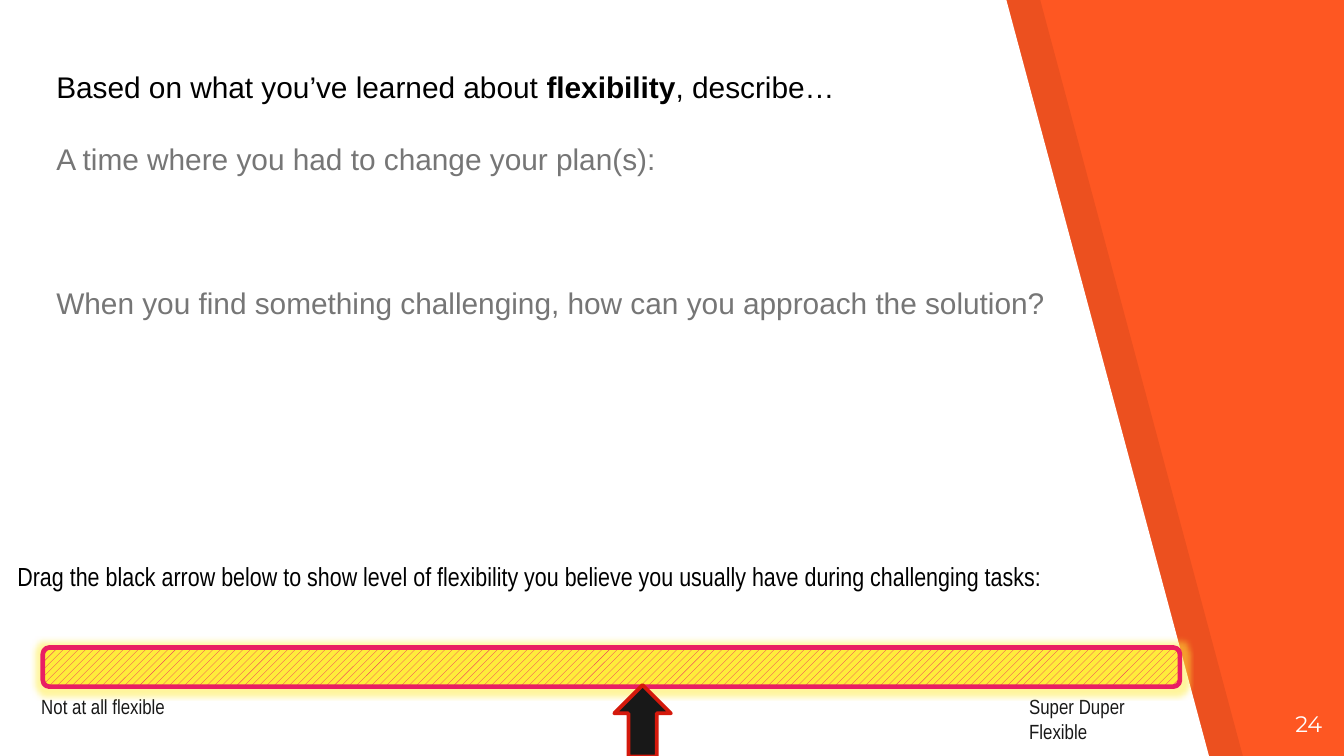
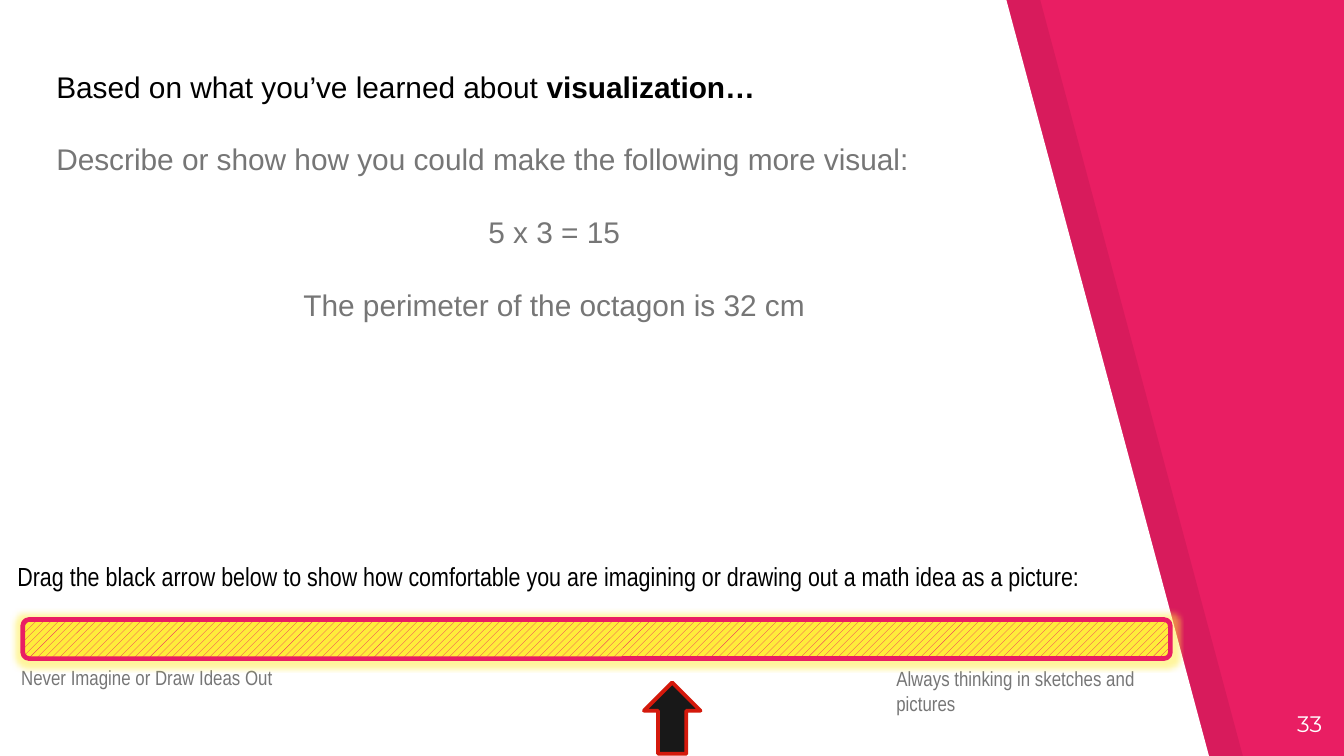
from lxml import etree
from pptx import Presentation
from pptx.dml.color import RGBColor
from pptx.enum.dml import MSO_PATTERN
from pptx.enum.shapes import MSO_SHAPE
from pptx.enum.text import MSO_ANCHOR, MSO_AUTO_SIZE, PP_ALIGN
from pptx.oxml.ns import qn
from pptx.util import Cm, Pt

LEFT, CENTER, RIGHT = PP_ALIGN.LEFT, PP_ALIGN.CENTER, PP_ALIGN.RIGHT
TOP, NO_FIT = MSO_ANCHOR.TOP, MSO_AUTO_SIZE.NONE
ROUND, ARROW = MSO_SHAPE.ROUNDED_RECTANGLE, MSO_SHAPE.UP_ARROW
STRIPES = MSO_PATTERN.WIDE_UPWARD_DIAGONAL

BLACK, WHITE, INK, GRAY = "000000", "FFFFFF", "181818", "767676"
ORANGE, PINK, YELLOW, RED = "FE5722", "E91E63", "FFEC3B", "D4190C"
SANS, NARROW, ROUNDED = "Arial", "Arial Narrow", "Montserrat"

SLIDES = [
    {
        "back": ORANGE,
        "number": "24",
        "title": ["Based on what you’ve learned about ", "flexibility", ", describe…"],
        "body": [
            ("A time where you had to change your plan(s):", LEFT, 0),
            ("When you find something challenging, how can you approach the solution?", LEFT, 58),
        ],
        "prompt": "Drag the black arrow below to show level of flexibility "
                  "you believe you usually have during challenging tasks:",
        "bar": (0.81, 12.24, 21.49, 0.74),
        "arrow": (11.61, 12.95, 1.07, 1.35),
        "ends": [
            ("Not at all flexible", (0.53, 13, 3.99, 0.74)),
            ("Super Duper Flexible", (19.2, 13, 3.43, 0.74)),
        ],
        "ink": INK,
    },
    {
        "back": PINK,
        "number": "33",
        "title": ["Based on what you’ve learned about ", "visualization…"],
        "body": [
            ("Describe or show how you could make the following more visual:", LEFT, 0),
            ("5 x 3 = 15", CENTER, 20),
            ("The perimeter of the octagon is 32 cm", CENTER, 20),
        ],
        "prompt": "Drag the black arrow below to show how comfortable you are "
                  "imagining or drawing out a math idea as a picture:",
        "bar": (0.43, 11.71, 21.69, 0.74),
        "arrow": (12.17, 12.9, 1.07, 1.35),
        "ends": [
            ("Never Imagine or Draw Ideas Out", (0.15, 12.45, 5.89, 0.74)),
            ("Always thinking in sketches and pictures", (16.69, 12.47, 5.89, 0.74)),
        ],
        "ink": GRAY,
    },
]


def paint(color, code):
    """Set a colour from a hex string."""
    color.rgb = RGBColor.from_string(code)


def style(run, size, font, code, bold=False):
    """Format one run."""
    run.font.size, run.font.name, run.font.bold = Pt(size), font, bold
    paint(run.font.color, code)


def place(shape, box):
    """Move a placeholder to a box and set up its frame."""
    shape.left, shape.top, shape.width, shape.height = map(Cm, box)
    frame = shape.text_frame
    frame.word_wrap, frame.auto_size = True, NO_FIT
    frame.vertical_anchor = TOP
    return frame


def label(slide, text, box, size, font, code, align=LEFT):
    """Add a wrapped text box with one paragraph."""
    frame = slide.shapes.add_textbox(*map(Cm, box)).text_frame
    frame.word_wrap = True
    line = frame.paragraphs[0]
    line.text, line.alignment = text, align
    style(line.runs[0], size, font, code)
    return frame


def panel(slide, layout, shift, code, alpha):
    """Draw a slanted panel and hand it to the layout."""
    pen = slide.shapes.build_freeform(Cm(shift), Cm(-0.03))
    points = [(0, 14.33), (22.86, 14.33), (19.02, 0)]
    pen.add_line_segments([(Cm(x + shift), Cm(y)) for x, y in points])
    shape = pen.convert_to_shape()
    shape.shadow.inherit = False
    shape.line.fill.background()
    shape.fill.solid()
    paint(shape.fill.fore_color, code)
    tint = shape.element.spPr.find(qn("a:solidFill"))[0]
    etree.SubElement(tint, qn("a:alpha"), val=str(alpha * 1000))
    layout.shapes.element.insert(2, shape.element)


def heading(slide, parts):
    """Fill the title, with its second part in bold."""
    line = place(slide.shapes.title, (0.81, 1.17, 19.33, 0.92)).paragraphs[0]
    line.alignment = LEFT
    for i, part in enumerate(parts):
        run = line.add_run()
        run.text = part
        style(run, 16, SANS, BLACK, i == 1)


def tasks(slide, items):
    """Fill the body with unbulleted task lines."""
    frame = place(slide.placeholders[1], (0.81, 2.53, 19.33, 3.7))
    frame.text = "\n".join(text for text, _, _ in items)
    for line, (_, align, gap) in zip(frame.paragraphs, items):
        line.alignment, line.space_before = align, Pt(gap)
        props = line._p.get_or_add_pPr()
        props.set("marL", "0")
        props.set("indent", "0")
        etree.SubElement(props, qn("a:buNone"))
        style(line.runs[0], 16, SANS, GRAY)


def block(slide, kind, box, edge, width):
    """Add an outlined preset shape without a shadow."""
    shape = slide.shapes.add_shape(kind, *map(Cm, box))
    shape.shadow.inherit = False
    paint(shape.line.color, edge)
    shape.line.width = Pt(width)
    return shape


def scale(slide, data):
    """Draw the prompt, striped bar, arrow and end labels."""
    label(slide, data["prompt"], (0.08, 10.46, 25.32, 0.86), 14, NARROW, BLACK)
    for text, box in data["ends"]:
        label(slide, text, box, 11, NARROW, data["ink"])
    bar = block(slide, ROUND, data["bar"], PINK, 2.5)
    bar.fill.patterned()
    bar.fill.pattern = STRIPES
    paint(bar.fill.fore_color, PINK)
    paint(bar.fill.back_color, YELLOW)
    effects = bar.element.spPr.find(qn("a:effectLst"))
    glow = etree.SubElement(effects, qn("a:glow"), rad=str(Pt(6)))
    tint = etree.SubElement(glow, qn("a:srgbClr"), val=YELLOW)
    etree.SubElement(tint, qn("a:alpha"), val="50000")
    arrow = block(slide, ARROW, data["arrow"], RED, 2)
    arrow.fill.solid()
    paint(arrow.fill.fore_color, INK)


def survey(deck, layout, data):
    """Build one reflection slide."""
    slide = deck.slides.add_slide(layout)
    slide.background.fill.solid()
    paint(slide.background.fill.fore_color, data["back"])
    heading(slide, data["title"])
    tasks(slide, data["body"])
    scale(slide, data)
    frame = label(slide, data["number"], (23.72, 13.18, 1.52, 1.09),
                  12, ROUNDED, WHITE, RIGHT)
    frame.margin_top = frame.margin_bottom = Cm(0.25)
    return slide


def main():
    """Build and save the deck."""
    deck = Presentation()
    deck.slide_width, deck.slide_height = Cm(25.4), Cm(14.29)
    layout = deck.slide_layouts[1]
    for holder in list(layout.placeholders)[2:]:
        layout.shapes.element.remove(holder.element)
    slides = [survey(deck, layout, data) for data in SLIDES]
    panel(slides[0], layout, 0, WHITE, 100)
    panel(slides[0], layout, 0.64, BLACK, 7)
    deck.save("out.pptx")


if __name__ == "__main__":
    main()
